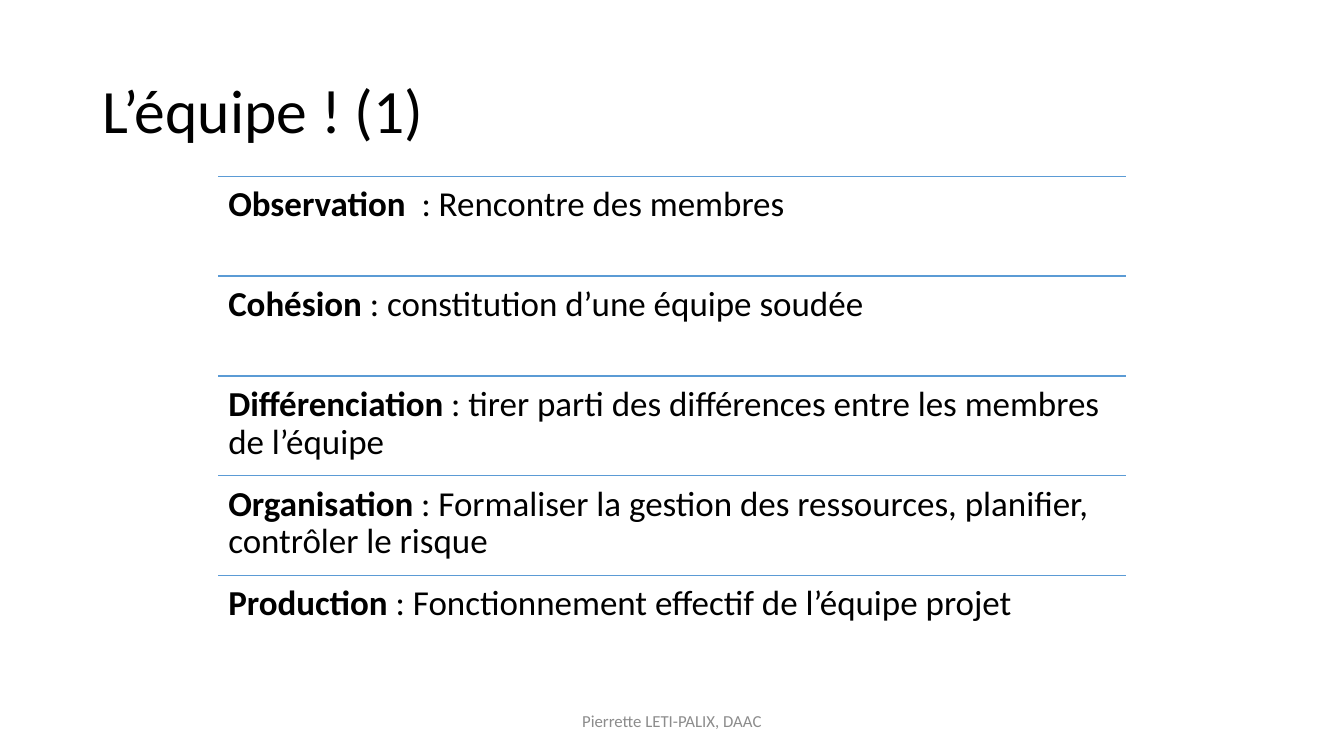
from dataclasses import dataclass

from lxml.etree import SubElement
from pptx import Presentation
from pptx.dml.color import RGBColor
from pptx.enum.shapes import MSO_CONNECTOR
from pptx.enum.text import MSO_ANCHOR, PP_ALIGN
from pptx.oxml.ns import qn
from pptx.util import Inches, Pt


@dataclass(frozen=True)
class Theme:
    font: str = "Calibri"
    text: str = "000000"
    rule: str = "5B9BD5"
    muted: str = "8C8C8C"
    title_size: int = 44
    stage_size: int = 25
    footer_size: int = 12
    rule_width: int = 1


# The slide is divided into a fine grid
COLUMNS, ROWS = 160, 150


class Page:
    def __init__(self, deck, theme):
        self.theme = theme
        self.column = deck.slide_width / COLUMNS
        self.row = deck.slide_height / ROWS
        self.slide = deck.slides.add_slide(deck.slide_layouts[6])

    def place(self, column, row):
        return round(column * self.column), round(row * self.row)

    def text(self, area, spans, size, color, anchor=MSO_ANCHOR.MIDDLE,
             align=PP_ALIGN.LEFT, spacing=1.0, margin=0.05):
        """Add one paragraph; spans are (wording, bold) pairs."""
        left, top, width, height = area
        box = self.slide.shapes.add_textbox(
            *self.place(left, top), *self.place(width, height))
        frame = box.text_frame
        frame.word_wrap = True
        frame.vertical_anchor = anchor
        frame.margin_top = frame.margin_bottom = Inches(margin)
        para = frame.paragraphs[0]
        para.alignment = align
        para.line_spacing = spacing
        for wording, bold in spans:
            span = para.add_run()
            span.text = wording
            span.font.name = self.theme.font
            span.font.size = Pt(size)
            span.font.bold = bold
            span.font.color.rgb = RGBColor.from_string(color)

    def rule(self, left, top, width):
        line = self.slide.shapes.add_connector(
            MSO_CONNECTOR.STRAIGHT,
            *self.place(left, top), *self.place(left + width, top))
        line.line.color.rgb = RGBColor.from_string(self.theme.rule)
        line.line.width = Pt(self.theme.rule_width)
        SubElement(line._element.spPr, qn("a:effectLst"))

    def title(self, wording):
        self.text((11, 8, 138, 29), [(wording, False)],
                  self.theme.title_size, self.theme.text, spacing=0.9)

    def stage(self, area, name, detail):
        left, top, width, _ = area
        self.rule(left, top, width)
        self.text(area, [(name, True), (detail, False)],
                  self.theme.stage_size, self.theme.text,
                  anchor=MSO_ANCHOR.TOP, spacing=0.9, margin=0.1)

    def footer(self, wording):
        self.text((53, 139, 54, 8), [(wording, False)],
                  self.theme.footer_size, self.theme.muted,
                  align=PP_ALIGN.CENTER)


STAGES = [
    ("Observation", "  : Rencontre des membres"),
    ("Cohésion", " : constitution d’une équipe soudée"),
    ("Différenciation",
     " : tirer parti des différences entre les membres de l’équipe"),
    ("Organisation ",
     ": Formaliser la gestion des ressources, planifier, contrôler le risque"),
    ("Production", " : Fonctionnement effectif de l’équipe projet"),
]
STAGE_LEFT, STAGE_TOP, STAGE_WIDTH, STAGE_HEIGHT = 26, 35, 108, 19.8


def main():
    deck = Presentation()
    deck.slide_width, deck.slide_height = Inches(40 / 3), Inches(7.5)
    page = Page(deck, Theme())

    page.title("L’équipe ! (1)")

    # Stages of team building, stacked at an equal pitch
    for index, (name, detail) in enumerate(STAGES):
        top = STAGE_TOP + index * STAGE_HEIGHT
        page.stage((STAGE_LEFT, top, STAGE_WIDTH, STAGE_HEIGHT), name, detail)

    page.footer("Pierrette LETI-PALIX, DAAC")
    deck.save("out.pptx")


if __name__ == "__main__":
    main()
